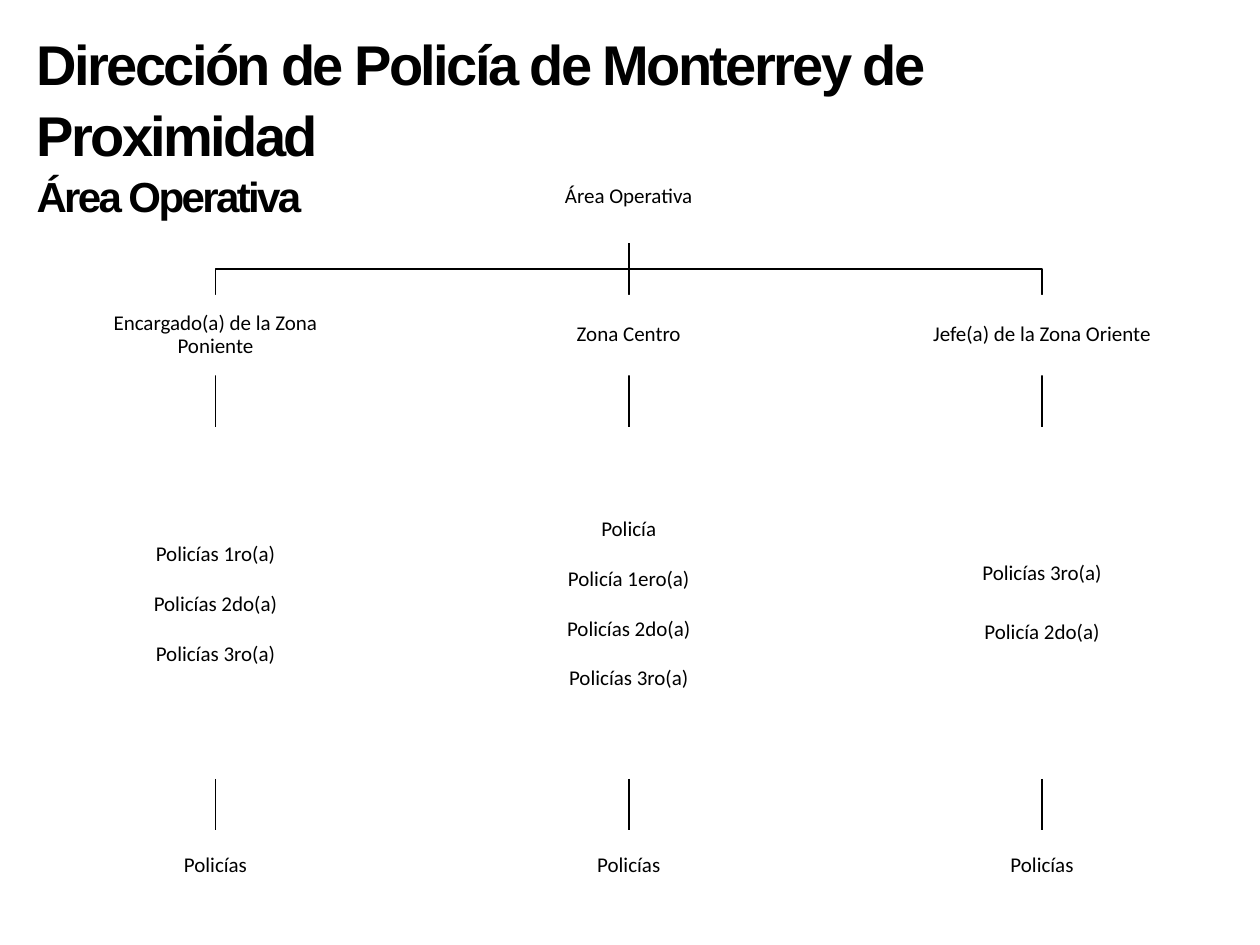
from dataclasses import dataclass

from lxml.etree import SubElement
from pptx import Presentation
from pptx.dml.color import RGBColor
from pptx.enum.shapes import MSO_CONNECTOR, MSO_SHAPE
from pptx.enum.text import MSO_ANCHOR, PP_ALIGN
from pptx.oxml.ns import qn
from pptx.util import Inches, Pt


@dataclass(frozen=True)
class Theme:
    ink: RGBColor = RGBColor(0, 0, 0)
    paper: RGBColor = RGBColor(255, 255, 255)
    heading_font: str = "Arial"
    body_font: str = "Calibri"
    title_size: int = 32
    subtitle_size: int = 24
    body_size: int = 12
    line_width: int = 1


THEME = Theme()
HEADING = [
    ("Dirección de Policía de Monterrey de Proximidad", THEME.title_size),
    ("Área Operativa", THEME.subtitle_size),
]
ROOT = "Área Operativa"
ZONES = [
    {"head": "Encargado(a) de la Zona Poniente",
     "ranks": ["Policías 1ro(a)", "Policías 2do(a)", "Policías 3ro(a)"],
     "width": 2.71, "spacing": 1.0, "gap": 14},
    {"head": "Zona Centro",
     "ranks": ["Policía", "Policía 1ero(a)", "Policías 2do(a)", "Policías 3ro(a)"],
     "width": 3.02, "spacing": 1.0, "gap": 14},
    {"head": "Jefe(a) de la Zona Oriente",
     "ranks": ["Policías 3ro(a)", "Policía 2do(a)"],
     "width": 2.71, "spacing": 0.9, "gap": 21},
]
BASE = "Policías"

FIRST_CENTER, ZONE_STEP = 1.71, 3.28
ROOT_CENTER = FIRST_CENTER + ZONE_STEP
ROOT_TOP, ROOT_BOTTOM = 1.19, 1.93
HEAD_TOP, HEAD_BOTTOM = 2.34, 2.98
RANKS_TOP, RANKS_BOTTOM = 3.39, 6.18
BASE_TOP, BASE_BOTTOM = 6.59, 7.15
BUS = (ROOT_BOTTOM + HEAD_TOP) / 2


def write(paragraph, text, *, size=THEME.body_size, font=THEME.body_font, bold=False,
          align=PP_ALIGN.CENTER, spacing=0.9, before=0, tracking=0):
    paragraph.alignment = align
    paragraph.line_spacing = spacing
    paragraph.space_before = Pt(before)
    paragraph.space_after = Pt(0)
    run = paragraph.add_run()
    run.text = text
    run.font.size = Pt(size)
    run.font.name = font
    run.font.bold = bold
    run.font.color.rgb = THEME.ink
    if tracking:
        run.font._element.set("spc", str(int(tracking * 100)))


def add_box(slide, center, top, bottom, width, lines, filled=True, spacing=0.9, gap=0):
    box = slide.shapes.add_shape(MSO_SHAPE.RECTANGLE, Inches(center - width / 2), Inches(top),
                                 Inches(width), Inches(bottom - top))
    box.shadow.inherit = False
    box.line.fill.background()
    if filled:
        box.fill.solid()
        box.fill.fore_color.rgb = THEME.paper
    else:
        box.fill.background()
    frame = box.text_frame
    frame.word_wrap = True
    frame.vertical_anchor = MSO_ANCHOR.MIDDLE
    frame.margin_left = frame.margin_right = Inches(0.01)
    frame.margin_top = frame.margin_bottom = Inches(0.01)
    for index, line in enumerate(lines):
        paragraph = frame.add_paragraph() if index else frame.paragraphs[0]
        write(paragraph, line, spacing=spacing, before=gap if index else 0)


def style_line(shape):
    shape.line.color.rgb = THEME.ink
    shape.line.width = Pt(THEME.line_width)


def add_stem(slide, center, top, bottom):
    stem = slide.shapes.add_connector(MSO_CONNECTOR.STRAIGHT, Inches(center), Inches(top),
                                      Inches(center), Inches(bottom))
    style_line(stem)
    SubElement(stem._element.spPr, qn("a:effectLst"))


def add_branch(slide, center):
    start, *bends = [(Inches(x), Inches(y)) for x, y in (
        (ROOT_CENTER, ROOT_BOTTOM), (ROOT_CENTER, BUS), (center, BUS), (center, HEAD_TOP))]
    builder = slide.shapes.build_freeform(*start)
    builder.add_line_segments(bends, close=False)
    branch = builder.convert_to_shape()
    branch.fill.background()
    branch.shadow.inherit = False
    style_line(branch)


def add_heading(slide):
    title = slide.shapes.title
    title.left, title.top = Inches(0.19), Inches(0.16)
    title.width, title.height = Inches(7.46), Inches(1.58)
    frame = title.text_frame
    frame.word_wrap = True
    frame.vertical_anchor = MSO_ANCHOR.TOP
    for index, (line, size) in enumerate(HEADING):
        paragraph = frame.add_paragraph() if index else frame.paragraphs[0]
        write(paragraph, line, size=size, font=THEME.heading_font, bold=True,
              align=PP_ALIGN.LEFT, spacing=1.05, tracking=-1.5)


def main():
    deck = Presentation()
    deck.slide_width, deck.slide_height = Inches(10), Inches(7.5)
    slide = deck.slides.add_slide(deck.slide_layouts[5])
    add_heading(slide)
    centers = [FIRST_CENTER + ZONE_STEP * index for index in range(len(ZONES))]
    for center in centers:
        if center == ROOT_CENTER:
            add_stem(slide, center, ROOT_BOTTOM, HEAD_TOP)
        else:
            add_branch(slide, center)
        add_stem(slide, center, HEAD_BOTTOM, RANKS_TOP)
        add_stem(slide, center, RANKS_BOTTOM, BASE_TOP)
    add_box(slide, ROOT_CENTER, ROOT_TOP, ROOT_BOTTOM, 2.15, [ROOT], filled=False)
    for center, zone in zip(centers, ZONES):
        add_box(slide, center, HEAD_TOP, HEAD_BOTTOM, 1.95, [zone["head"]])
        add_box(slide, center, RANKS_TOP, RANKS_BOTTOM, zone["width"], zone["ranks"],
                spacing=zone["spacing"], gap=zone["gap"])
        add_box(slide, center, BASE_TOP, BASE_BOTTOM, 2.05, [BASE])
    deck.save("out.pptx")


if __name__ == "__main__":
    main()
